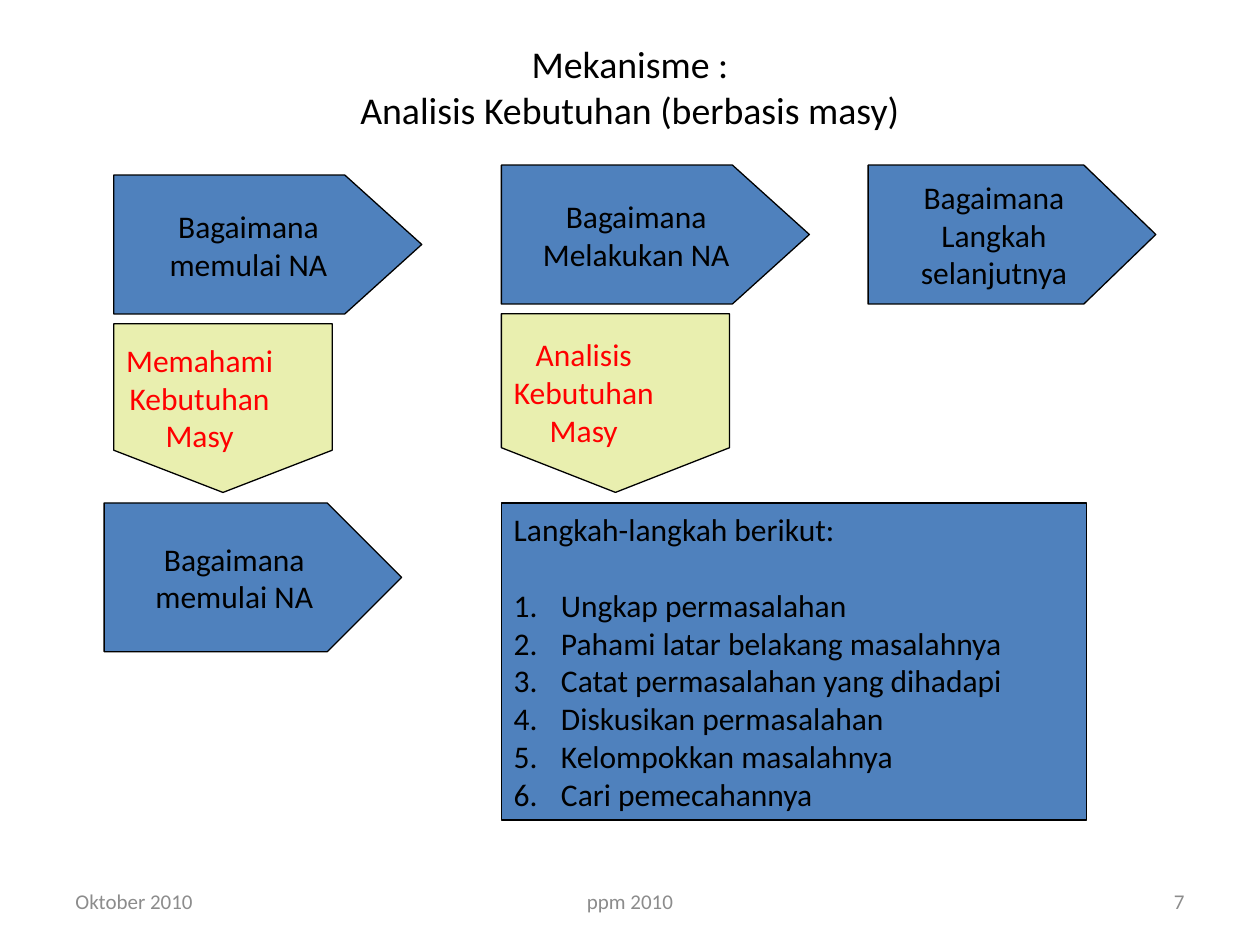
from dataclasses import dataclass

from lxml import etree
from pptx import Presentation
from pptx.dml.color import RGBColor
from pptx.enum.shapes import MSO_SHAPE
from pptx.enum.text import MSO_ANCHOR, MSO_AUTO_SIZE, PP_ALIGN
from pptx.oxml.ns import qn
from pptx.util import Pt

ARROW, RECT = MSO_SHAPE.PENTAGON, MSO_SHAPE.RECTANGLE
LEFT, MID, RIGHT = PP_ALIGN.LEFT, PP_ALIGN.CENTER, PP_ALIGN.RIGHT
BLUE, CREAM, BLACK, RED, GREY = "4F81BD", "E9EFAF", "000000", "FF0000", "8C8C8C"
FONT = "Calibri"
COL = 286.5  # left edge of the middle column
ROW = 94.3  # top edge of the upper row
LOW = 287.4  # top edge of the lower row
INDENT = 27


@dataclass
class Box:
    text: str
    left: float
    top: float
    width: float
    height: float
    adj: float = 0.25


@dataclass
class Foot:
    text: str
    left: float
    width: float
    align: PP_ALIGN


STEPS = [
    Box("Bagaimana\nmemulai NA", 65, 100, 176, 79.4, 0.554),
    Box("Bagaimana\nMelakukan NA", COL, ROW, 176, 79.4, 0.554),
    Box("Bagaimana\nLangkah\nselanjutnya", 496.1, ROW, 164.4, 79.4, 0.518),
    Box("Bagaimana\nmemulai NA", 59.5, LOW, 170, 85, 0.5),
]
NEEDS = [
    Box("Memahami\nKebutuhan\nMasy", 65, 185, 124.8, 96.4),
    Box("Analisis\nKebutuhan\nMasy", COL, 179.3, 130.4, 102.1),
]
TASKS = Box(
    "Langkah-langkah berikut:\n"
    "Ungkap permasalahan\n"
    "Pahami latar belakang masalahnya\n"
    "Catat permasalahan yang dihadapi\n"
    "Diskusikan permasalahan\n"
    "Kelompokkan masalahnya\n"
    "Cari pemecahannya",
    COL, LOW, 334.6, 181.2,
)
FEET = [
    Foot("Oktober 2010", 36, 168, LEFT),
    Foot("ppm 2010", 246, 228, MID),
    Foot("7", 516, 168, RIGHT),
]


def rgb(code: str) -> RGBColor:
    return RGBColor.from_string(code)


def write(frame, text: str, size: float, color: str, align: PP_ALIGN) -> None:
    frame.text = text
    frame.word_wrap = True
    frame.vertical_anchor = MSO_ANCHOR.MIDDLE
    for par in frame.paragraphs:
        par.alignment = align
        for run in par.runs:
            run.font.name = FONT
            run.font.size = Pt(size)
            run.font.color.rgb = rgb(color)


def place(shape, left: float, top: float, width: float, height: float) -> None:
    shape.left, shape.top = Pt(left), Pt(top)
    shape.width, shape.height = Pt(width), Pt(height)


def draw(slide, kind, box: Box, fill: str, color: str, align: PP_ALIGN):
    shape = slide.shapes.add_shape(kind, 0, 0, 0, 0)
    place(shape, box.left, box.top, box.width, box.height)
    if kind == ARROW:
        shape.adjustments[0] = box.adj
    shape.shadow.inherit = False
    shape.fill.solid()
    shape.fill.fore_color.rgb = rgb(fill)
    shape.line.color.rgb = rgb(BLACK)
    shape.line.width = Pt(0.75)
    write(shape.text_frame, box.text, 18, color, align)
    return shape


def draw_down(slide, box: Box) -> None:
    """Draw an arrow turned to point down, its text kept upright."""
    shape = draw(slide, ARROW, box, CREAM, RED, MID)
    shift = (box.width - box.height) / 2
    place(shape, box.left + shift, box.top - shift, box.height, box.width)
    shape.rotation = 90
    shape.text_frame.word_wrap = False
    body = shape.text_frame._txBody.bodyPr
    body.set("rot", "10800000")
    body.set("vert", "eaVert")


def number(par) -> None:
    props = par._p.get_or_add_pPr()
    props.set("marL", str(Pt(INDENT)))
    props.set("indent", str(-Pt(INDENT)))
    mark = etree.SubElement(props, qn("a:buFont"))
    mark.set("typeface", "+mj-lt")
    mark = etree.SubElement(props, qn("a:buAutoNum"))
    mark.set("type", "arabicPeriod")


def draw_tasks(slide) -> None:
    shape = draw(slide, RECT, TASKS, BLUE, BLACK, LEFT)
    items = shape.text_frame.paragraphs[1:]
    items[0].space_before = Pt(21.6)
    for par in items:
        number(par)


def draw_foot(slide, foot: Foot) -> None:
    shape = slide.shapes.add_textbox(
        Pt(foot.left), Pt(500.5), Pt(foot.width), Pt(28.8))
    write(shape.text_frame, foot.text, 12, GREY, foot.align)


def main() -> None:
    deck = Presentation()
    deck.slide_width, deck.slide_height = Pt(720), Pt(540)
    slide = deck.slides.add_slide(deck.slide_layouts[5])
    title = slide.shapes.title
    place(title, 36, 21.6, 648, 55.4)
    write(title.text_frame, "Mekanisme :\vAnalisis Kebutuhan (berbasis masy)",
          21.6, BLACK, MID)
    title.text_frame.auto_size = MSO_AUTO_SIZE.NONE
    for step in STEPS:
        draw(slide, ARROW, step, BLUE, BLACK, MID)
    for need in NEEDS:
        draw_down(slide, need)
    draw_tasks(slide)
    for foot in FEET:
        draw_foot(slide, foot)
    deck.save("out.pptx")


if __name__ == "__main__":
    main()
